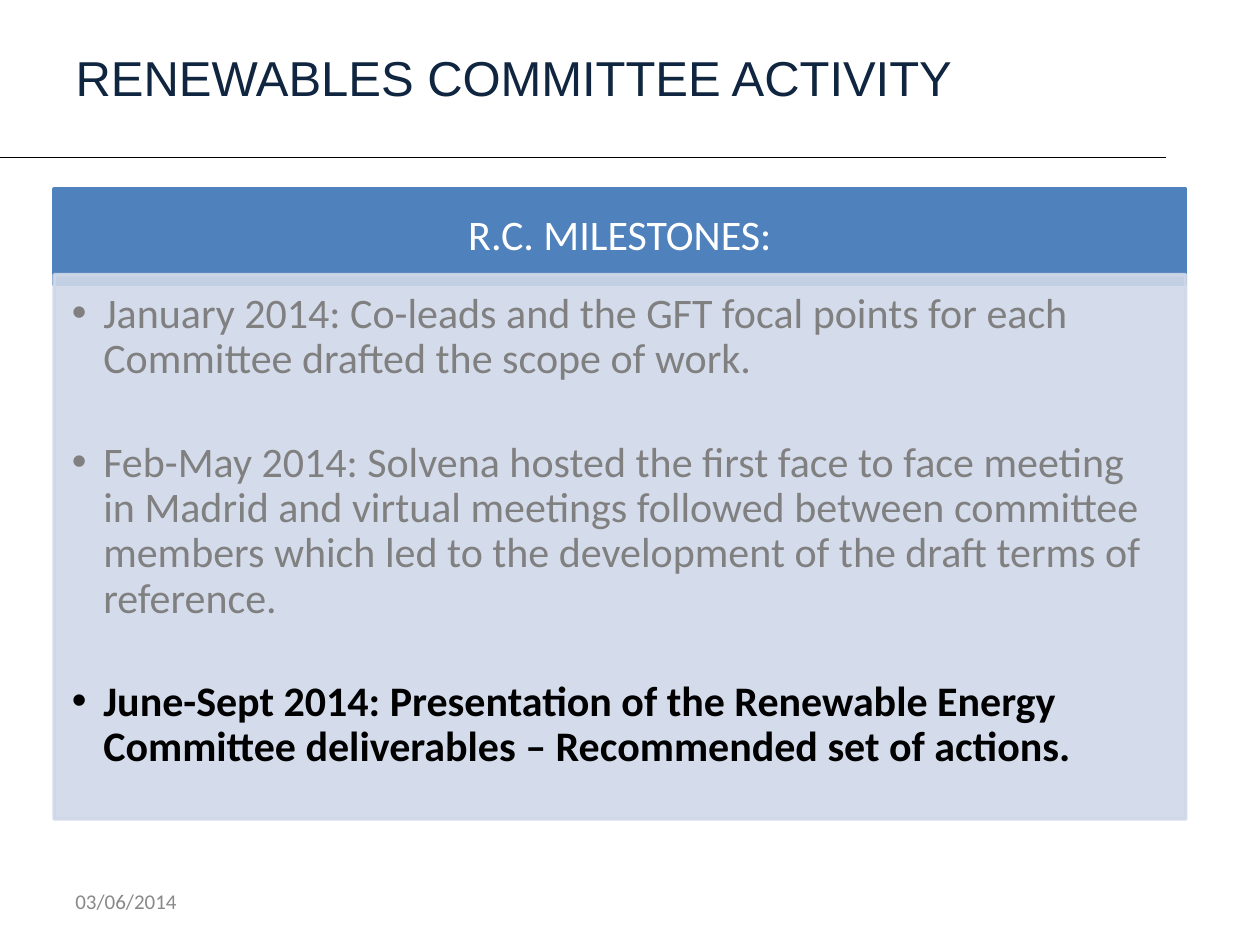
from pptx import Presentation
from pptx.dml.color import RGBColor
from pptx.enum.shapes import MSO_CONNECTOR, MSO_SHAPE
from pptx.enum.text import MSO_ANCHOR, MSO_AUTO_SIZE, PP_ALIGN
from pptx.oxml.ns import qn
from pptx.util import Inches, Pt
from lxml import etree

LEFT, CENTER = PP_ALIGN.LEFT, PP_ALIGN.CENTER
TOP, MIDDLE = MSO_ANCHOR.TOP, MSO_ANCHOR.MIDDLE

TITLE = "RENEWABLES COMMITTEE ACTIVITY"
HEADING = "R.C. MILESTONES:"
DATE = "03/06/2014"
MILESTONES = [  # text, current step
    ("January 2014: Co-leads and the GFT focal points for each Committee "
     "drafted the scope of work.", False),
    ("Feb-May 2014: Solvena hosted the first face to face meeting in Madrid "
     "and virtual meetings followed between committee members which led to "
     "the development of the draft terms of reference.", False),
    ("June-Sept 2014: Presentation of the Renewable Energy Committee "
     "deliverables – Recommended set of actions.", True),
]

THEME = {
    "title_font": "Arial", "body_font": "Calibri",
    "title_size": 28, "body_size": 24, "date_size": 12,
    "title": "10253F", "date": "898989", "rule": "000000",
    "band": "4F81BD", "heading": "FFFFFF", "panel": "D0D8E8",
    "past": "808080", "current": "000000",
}
PANEL_LEFT, PANEL_WIDTH = 0.43, 8.98
ITEM_GAP = 33  # points between milestones


def color(name):
    return RGBColor.from_string(THEME[name])


def place(sp, left, top, width, height):
    sp.left, sp.top = Inches(left), Inches(top)
    sp.width, sp.height = Inches(width), Inches(height)


def set_frame(tf, anchor, insets=(0.1, 0.05, 0.1, 0.05)):
    tf.word_wrap = True
    tf.auto_size = MSO_AUTO_SIZE.NONE
    tf.vertical_anchor = anchor
    (tf.margin_left, tf.margin_top,
     tf.margin_right, tf.margin_bottom) = map(Inches, insets)


def add_text(p, text, font, size, color_name, bold=False, align=LEFT):
    p.alignment = align
    r = p.add_run()
    r.text = text
    r.font.name = THEME[font]
    r.font.size = Pt(THEME[size])
    r.font.color.rgb = color(color_name)
    r.font.bold = bold


def paint(sp, color_name, opacity=100):
    sp.fill.solid()
    sp.fill.fore_color.rgb = color(color_name)
    sp.line.fill.solid()
    sp.line.color.rgb = color(color_name)
    sp.line.width = Pt(2)
    if opacity < 100:
        for clr in sp._element.spPr.iter(qn("a:srgbClr")):
            etree.SubElement(clr, qn("a:alpha"), val=str(opacity * 1000))


def add_header(s):
    rule = s.shapes.add_connector(MSO_CONNECTOR.STRAIGHT, 0, Inches(1.25),
                                  Inches(9.25), Inches(1.25))
    rule.line.color.rgb = color("rule")
    rule.line.width = Pt(0.75)
    etree.SubElement(rule._element.spPr, qn("a:effectLst"))

    title = s.shapes.title
    place(title, 0.5, 0.3, 9, 0.62)
    set_frame(title.text_frame, MIDDLE)
    add_text(title.text_frame.paragraphs[0], TITLE,
             "title_font", "title_size", "title")


def add_date(s):
    box = s.shapes.add_textbox(Inches(0.5), Inches(6.95),
                               Inches(2.33), Inches(0.4))
    set_frame(box.text_frame, MIDDLE)
    add_text(box.text_frame.paragraphs[0], DATE,
             "body_font", "date_size", "date")


def add_milestones(s):
    band = s.shapes.add_shape(MSO_SHAPE.RECTANGLE, 0, 0, 0, 0)
    place(band, PANEL_LEFT, 1.5, PANEL_WIDTH, 0.76)
    band.shadow.inherit = False
    paint(band, "band")
    set_frame(band.text_frame, MIDDLE, (0.19, 0.11, 0.19, 0.11))
    p = band.text_frame.paragraphs[0]
    p.line_spacing = 0.9
    add_text(p, HEADING, "body_font", "body_size", "heading", align=CENTER)

    body = s.placeholders[1]
    s.shapes._spTree.append(body._element)  # the panel overlaps the band
    place(body, PANEL_LEFT, 2.18, PANEL_WIDTH, 4.32)
    paint(body, "panel", opacity=90)
    tf = body.text_frame
    set_frame(tf, TOP, (0.14, 0.14, 0.19, 0.21))
    for i, (text, current) in enumerate(MILESTONES):
        p = tf.add_paragraph() if i else tf.paragraphs[0]
        pPr = p._p.get_or_add_pPr()
        pPr.set("marL", str(Inches(0.25)))
        pPr.set("indent", str(-Inches(0.25)))
        etree.SubElement(pPr, qn("a:buChar"), char="•")
        p.line_spacing = 0.9
        p.space_before = Pt(ITEM_GAP if i else 0)
        add_text(p, text, "body_font", "body_size",
                 "current" if current else "past", bold=current)


def main():
    prs = Presentation()
    prs.slide_width, prs.slide_height = Inches(10), Inches(7.5)
    s = prs.slides.add_slide(prs.slide_layouts[1])
    add_header(s)
    add_date(s)
    add_milestones(s)
    prs.save("out.pptx")


if __name__ == "__main__":
    main()
